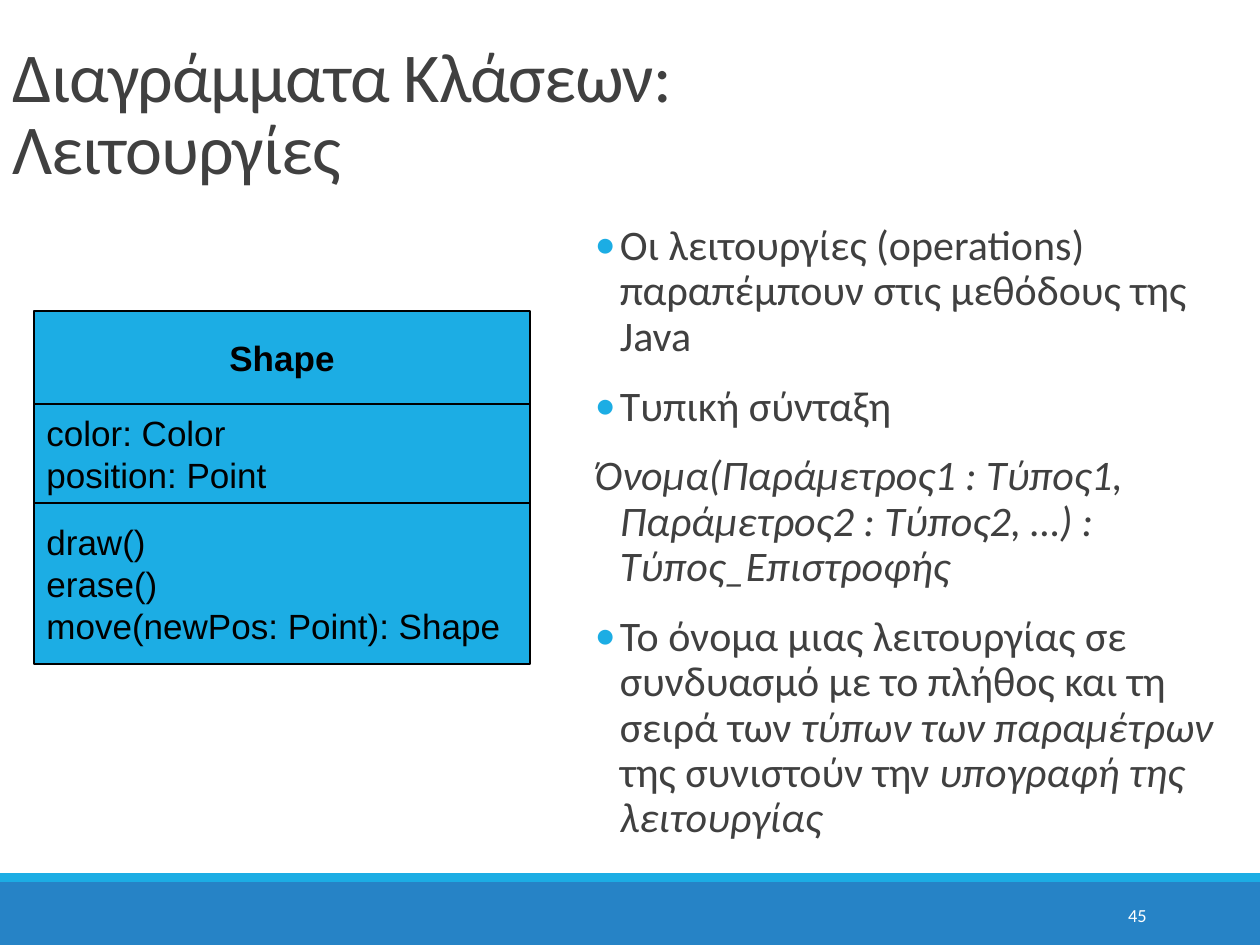
from pptx import Presentation
from pptx.dml.color import RGBColor
from pptx.enum.shapes import MSO_SHAPE
from pptx.enum.text import MSO_ANCHOR, MSO_AUTO_SIZE, PP_ALIGN
from pptx.oxml.ns import qn
from pptx.util import Pt
from lxml import etree

RECTANGLE = MSO_SHAPE.RECTANGLE
TOP, MIDDLE, BOTTOM = MSO_ANCHOR.TOP, MSO_ANCHOR.MIDDLE, MSO_ANCHOR.BOTTOM
LEFT, CENTER, RIGHT = PP_ALIGN.LEFT, PP_ALIGN.CENTER, PP_ALIGN.RIGHT
NO_AUTOFIT = MSO_AUTO_SIZE.NONE

PX_PER_INCH = 126
SLIDE_W, SLIDE_H = 1260, 945
COLORS = {
    "band": "2683C6",
    "accent": "1CADE4",
    "text": "404040",
    "ink": "000000",
    "white": "FFFFFF",
}

TITLE_LINES = ["Διαγράμματα Κλάσεων:", "Λειτουργίες"]
# Each point: has a bullet, then its runs as (text, italic)
POINTS = [
    (True, [("Οι λειτουργίες (operations) παραπέμπουν στις μεθόδους της Java", False)]),
    (True, [("Τυπική σύνταξη", False)]),
    (False, [("Όνομα(Παράμετρος1 : Τύπος1, Παράμετρος2 : Τύπος2, …) : "
              "Τύπος_Επιστροφής", True)]),
    (True, [("Το όνομα μιας λειτουργίας σε συνδυασμό με το πλήθος και τη σειρά των ", False),
            ("τύπων των παραμέτρων", True),
            (" της συνιστούν την ", False),
            ("υπογραφή της λειτουργίας", True)]),
]
# Each compartment: height, alignment, bold, lines
COMPARTMENTS = [
    (93, CENTER, True, ["Shape"]),
    (99, LEFT, False, ["color: Color", "position: Point"]),
    (161, LEFT, False, ["draw()", "erase()", "move(newPos: Point): Shape"]),
]


def px(length):
    return round(length * 914400 / PX_PER_INCH)


def color(name):
    return RGBColor.from_string(COLORS[name])


def add_run(paragraph, text, font, size, color_name, bold=False, italic=False):
    run = paragraph.add_run()
    run.text = text
    run.font.name, run.font.size = font, Pt(size)
    run.font.bold, run.font.italic = bold, italic
    run.font.color.rgb = color(color_name)
    return run


def add_box(slide, box, fill, line=None):
    rect = slide.shapes.add_shape(RECTANGLE, *map(px, box))
    rect.shadow.inherit = False
    rect.fill.solid()
    rect.fill.fore_color.rgb = color(fill)
    if line:
        rect.line.color.rgb = color(line)
        rect.line.width = Pt(0.75)
    else:
        rect.line.fill.background()
    return rect


def add_text_frame(slide, box, anchor):
    frame = slide.shapes.add_textbox(*map(px, box)).text_frame
    frame.word_wrap = True
    frame.vertical_anchor = anchor
    return frame


def set_bullet(paragraph, has_bullet):
    props = paragraph._p.get_or_add_pPr()
    props.set("marL", str(px(25)))
    props.set("indent", str(px(-25)))
    if has_bullet:
        bullet_color = etree.SubElement(props, qn("a:buClr"))
        etree.SubElement(bullet_color, qn("a:srgbClr"), val=COLORS["accent"])
        etree.SubElement(props, qn("a:buFont"), typeface="Calibri")
        etree.SubElement(props, qn("a:buChar"), char="•")
    else:
        etree.SubElement(props, qn("a:buNone"))


def add_footer(slide, left, top, width, height):
    stripe = 9
    add_box(slide, (left, top + stripe, width, height - stripe), "band")
    add_box(slide, (left, top, width, stripe), "accent")
    # Slide number
    frame = add_text_frame(slide, (left + 1023, top + 17, 136, 50), MIDDLE)
    number = frame.paragraphs[0]
    number.alignment = RIGHT
    add_run(number, "45", "Calibri", 10.5, "white")


def add_title(slide, left, top, width, height):
    title = slide.shapes.title
    title.left, title.top, title.width, title.height = map(px, (left, top, width, height))
    frame = title.text_frame
    frame.word_wrap = True
    frame.auto_size = NO_AUTOFIT
    frame.vertical_anchor = BOTTOM
    heading = frame.paragraphs[0]
    heading.alignment = LEFT
    heading.line_spacing = 0.85
    for index, line in enumerate(TITLE_LINES):
        if index:
            heading.add_line_break()
        run = add_run(heading, line, "Calibri", 40, "text")
        run.font._element.set("spc", "-50")


def add_points(slide, left, top, width, height):
    frame = add_text_frame(slide, (left, top, width, height), TOP)
    frame.margin_left = frame.margin_right = 0
    for index, (has_bullet, runs) in enumerate(POINTS):
        point = frame.add_paragraph() if index else frame.paragraphs[0]
        point.line_spacing = 0.9
        point.space_before, point.space_after = Pt(12), Pt(2)
        set_bullet(point, has_bullet)
        for text, italic in runs:
            add_run(point, text, "Calibri", 24, "text", italic=italic)


def add_class_diagram(slide, left, top, width):
    for height, alignment, bold, lines in COMPARTMENTS:
        compartment = add_box(slide, (left, top, width, height), "accent", "ink")
        frame = compartment.text_frame
        frame.word_wrap = True
        frame.vertical_anchor = MIDDLE
        for index, line in enumerate(lines):
            member = frame.add_paragraph() if index else frame.paragraphs[0]
            member.alignment = alignment
            add_run(member, line, "Arial", 20, "ink", bold=bold)
        top += height


def main():
    deck = Presentation()
    deck.slide_width, deck.slide_height = px(SLIDE_W), px(SLIDE_H)
    slide = deck.slides.add_slide(deck.slide_layouts[5])
    add_footer(slide, 0, 873, SLIDE_W, SLIDE_H - 873)
    add_title(slide, 0, 38, 1134, 157)
    add_points(slide, 595, 218, 665, 675)
    add_class_diagram(slide, 34, 311, 496)
    deck.save("out.pptx")


if __name__ == "__main__":
    main()
